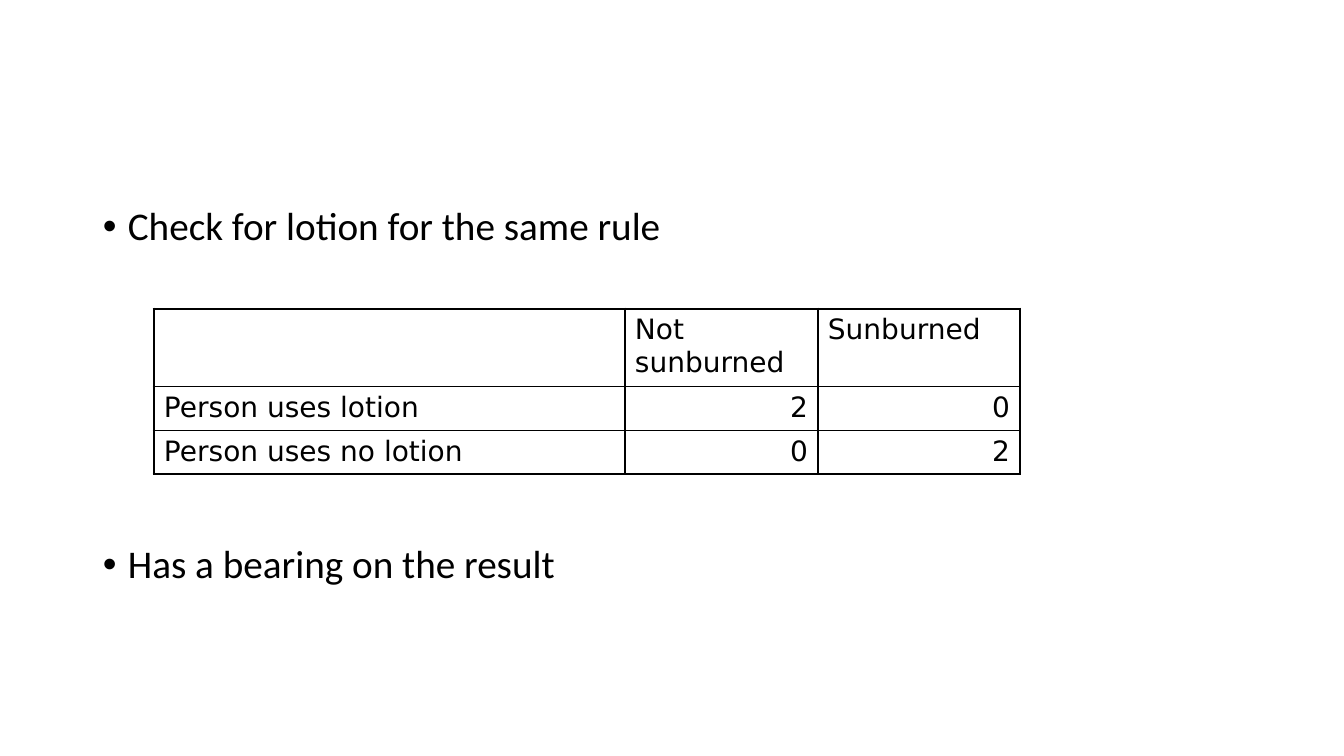
from lxml.etree import SubElement
from pptx import Presentation
from pptx.dml.color import RGBColor
from pptx.enum.text import PP_ALIGN as Align
from pptx.oxml.ns import qn
from pptx.util import Pt

# Content
BULLETS = [
    # text, space before in points (the second leaves room for the table)
    ("Check for lotion for the same rule", 10),
    ("Has a bearing on the result", 211),
]
ROWS = [
    ["", "Not sunburned", "Sunburned"],
    ["Person uses lotion", "2", "0"],
    ["Person uses no lotion", "0", "2"],
]

# Layout in px
SLIDE_SIZE = (1344, 756)
BODY_BOX = (93, 202, 1159, 480)
TABLE_ORIGIN = (154, 309)
COLUMN_WIDTHS = [471, 193, 202]
ROW_HEIGHTS = [75, 44, 44]
BULLET_INDENT = 25
CELL_MARGINS = (10, 5)
OUTER_LINE, INNER_LINE = 2.25, 1
BLACK = "000000"


def px(length):
    return round(length * 914400 / 100.8)


def color(value):
    return RGBColor.from_string(value)


def write(paragraph, text, font="Calibri", size=28, align=Align.LEFT,
          before=0, spacing=None, bullet=None):
    paragraph.alignment = align
    paragraph.space_before = Pt(before)
    if spacing:
        paragraph.line_spacing = spacing
    if bullet:
        properties = paragraph._p.get_or_add_pPr()
        properties.set("marL", str(px(BULLET_INDENT)))
        properties.set("indent", str(-px(BULLET_INDENT)))
        SubElement(properties, qn("a:buFont"), typeface="Arial")
        SubElement(properties, qn("a:buChar"), char=bullet)
    run = paragraph.add_run()
    run.text = text
    run.font.name = font
    run.font.size = Pt(size)
    run.font.color.rgb = color(BLACK)


def draw_borders(cell, widths):
    properties = cell._tc.get_or_add_tcPr()
    for position, (side, width) in enumerate(widths.items()):
        line = properties.makeelement(qn(f"a:ln{side}"), {"w": str(Pt(width))})
        fill = SubElement(line, qn("a:solidFill"))
        SubElement(fill, qn("a:srgbClr"), val=BLACK)
        properties.insert(position, line)


presentation = Presentation()
presentation.slide_width, presentation.slide_height = map(px, SLIDE_SIZE)
slide = presentation.slides.add_slide(presentation.slide_layouts[6])

# Bullets above and below the table
body = slide.shapes.add_textbox(*map(px, BODY_BOX)).text_frame
body.word_wrap = True
for index, (text, before) in enumerate(BULLETS):
    paragraph = body.add_paragraph() if index else body.paragraphs[0]
    write(paragraph, text, before=before, spacing=0.9, bullet="•")

# Table of lotion use against sunburn
table_size = (sum(COLUMN_WIDTHS), sum(ROW_HEIGHTS))
table = slide.shapes.add_table(len(ROWS), len(COLUMN_WIDTHS),
                               *map(px, TABLE_ORIGIN + table_size)).table
table.first_row = table.horz_banding = False
for column, width in zip(table.columns, COLUMN_WIDTHS):
    column.width = px(width)
for row, height in zip(table.rows, ROW_HEIGHTS):
    row.height = px(height)

last_row, last_column = len(ROWS) - 1, len(COLUMN_WIDTHS) - 1
for row_index, row in enumerate(ROWS):
    for column_index, text in enumerate(row):
        cell = table.cell(row_index, column_index)
        cell.fill.background()
        cell.margin_left = cell.margin_right = px(CELL_MARGINS[0])
        cell.margin_top = cell.margin_bottom = px(CELL_MARGINS[1])
        if text:
            write(cell.text_frame.paragraphs[0], text, font="DejaVu Sans", size=20,
                  align=Align.RIGHT if text.isdigit() else Align.LEFT)
        on_edge = {"L": column_index == 0, "R": column_index == last_column,
                   "T": row_index == 0, "B": row_index == last_row}
        draw_borders(cell, {side: OUTER_LINE if outer else INNER_LINE
                            for side, outer in on_edge.items()})

presentation.save("out.pptx")
